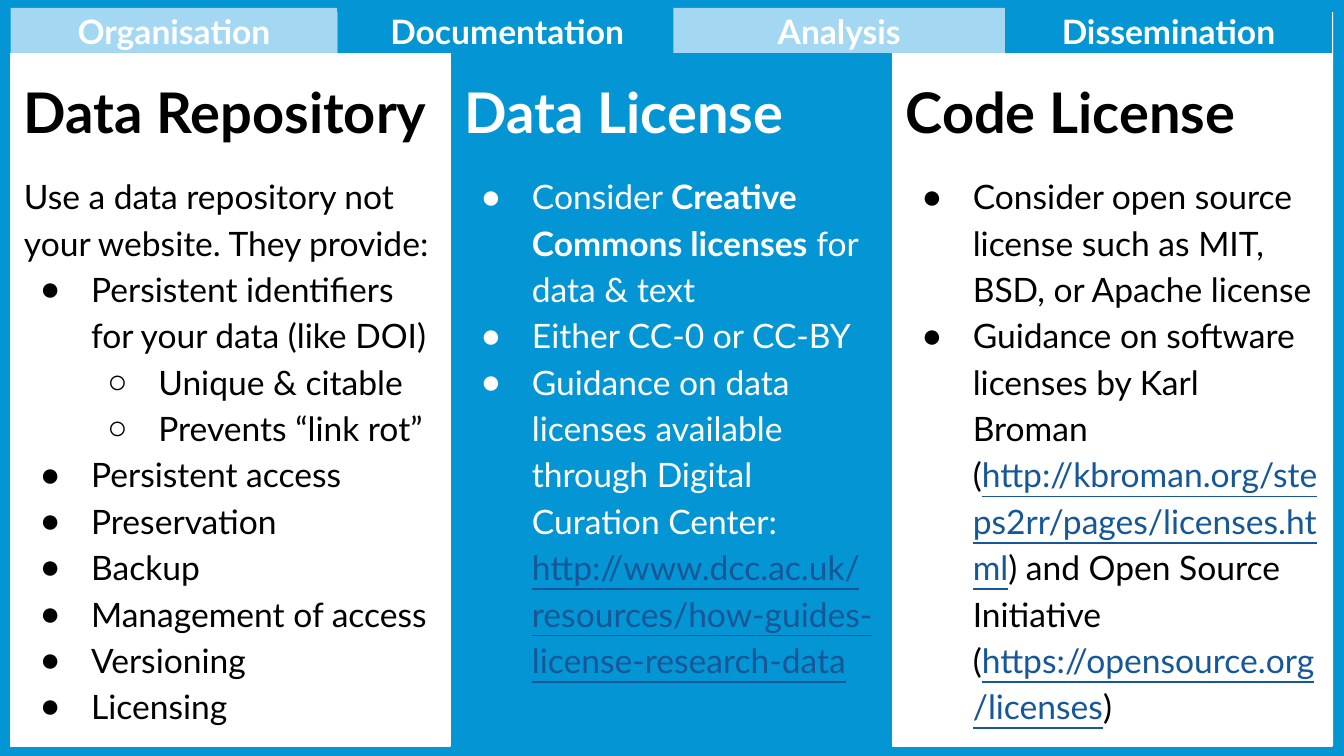
from lxml import etree
from pptx import Presentation
from pptx import util as u
from pptx.dml.color import RGBColor
from pptx.enum import shapes, text
from pptx.oxml.ns import qn

FONT, BULLET_FONT = "Lato", "Arial"
BLUE, PALE, WHITE, BLACK, LINK = "0496D4", "A4D7F2", "FFFFFF", "000000", "165797"

TABS = [
    ("Organisation", 0.08, 2.43, PALE),
    ("Documentation", 2.51, 2.53, BLUE),
    ("Analysis", 5.01, 2.47, PALE),
    ("Dissemination", 7.48, 2.43, BLUE),
]

# Paragraph kind: left margin, first-line indent, bullet
KINDS = {
    "plain": (0, 0, None),
    "item": (0.5, -0.38, "●"),
    "subitem": (1, -0.38, "○"),
    "continued": (0.5, 0, None),
}

# Each column: heading, fill, text colour, paragraphs as (kind, (text, style), ...)
COLUMNS = [
    ("Data Repository", WHITE, BLACK, [
        ("plain", ("Use a data repository not your website. They provide:", "")),
        ("item", ("Persistent identifiers for your data (like DOI)", "")),
        ("subitem", ("Unique & citable", "")),
        ("subitem", ("Prevents “link rot”", "")),
        ("item", ("Persistent access", "")),
        ("item", ("Preservation", "")),
        ("item", ("Backup", "")),
        ("item", ("Management of access", "")),
        ("item", ("Versioning", "")),
        ("item", ("Licensing", "")),
    ]),
    ("Data License", BLUE, WHITE, [
        ("item", ("Consider ", ""), ("Creative Commons licenses", "bold"),
         (" for data & text", "")),
        ("item", ("Either CC-0 or CC-BY", "")),
        ("item", ("Guidance on data licenses available through "
                  "Digital Curation Center:", "")),
        ("continued", ("http://www.dcc.ac.uk/resources/"
                       "how-guides-license-research-data", "link")),
    ]),
    ("Code License", WHITE, BLACK, [
        ("item", ("Consider open source license such as MIT, BSD, "
                  "or Apache license", "")),
        ("item", ("Guidance on software licenses by Karl Broman (", ""),
         ("http://kbroman.org/steps2rr/pages/licenses.html", "link"),
         (") and Open Source Initiative (", ""),
         ("https://opensource.org/licenses", "link"), (")", "")),
    ]),
]


def paint(target, colour):
    """Give a fill a solid colour."""
    target.solid()
    target.fore_color.rgb = RGBColor.from_string(colour)


def add_panel(page, left, top, width, height, colour, outlined=False):
    panel = page.shapes.add_shape(
        shapes.MSO_SHAPE.RECTANGLE,
        u.Inches(left), u.Inches(top), u.Inches(width), u.Inches(height))
    panel.shadow.inherit = False
    paint(panel.fill, colour)
    if outlined:
        paint(panel.line.fill, colour)
        panel.line.width = u.Pt(0.75)
    else:
        panel.line.fill.background()
    frame = panel.text_frame
    frame.word_wrap = True
    frame.margin_left = frame.margin_right = u.Inches(0.1)
    frame.margin_top = frame.margin_bottom = u.Inches(0.1)
    return panel


def set_font(para, size, colour, bold=False):
    para.font.name = FONT
    para.font.size = u.Pt(size)
    para.font.bold = bold
    paint(para.font.fill, colour)


def set_indent(para, kind, colour):
    margin, indent, bullet = KINDS[kind]
    para.level = 1 if kind == "subitem" else 0
    props = para._p.get_or_add_pPr()
    props.set("marL", str(u.Inches(margin)))
    props.set("indent", str(u.Inches(indent)))
    if bullet:
        tint = etree.SubElement(props, qn("a:buClr"))
        etree.SubElement(tint, qn("a:srgbClr"), val=colour)
        etree.SubElement(props, qn("a:buFont"), typeface=BULLET_FONT)
        etree.SubElement(props, qn("a:buChar"), char=bullet)


def add_spans(para, spans):
    for words, style in spans:
        span = para.add_run()
        span.text = words
        if style == "bold":
            span.font.bold = True
        elif style == "link":
            span.font.underline = True
            paint(span.font.fill, LINK)


def add_tab(page, label, left, width, colour):
    tab = add_panel(page, left, 0.06, width, 0.34, colour)
    tab.text_frame.vertical_anchor = text.MSO_ANCHOR.MIDDLE
    para = tab.text_frame.paragraphs[0]
    para.text = label
    para.alignment = text.PP_ALIGN.CENTER
    para.space_before = u.Pt(6)
    set_font(para, 18, WHITE, bold=True)


def add_column(page, left, heading, fill, colour, content):
    column = add_panel(page, left, 0.4, 3.27, 5.15, fill, outlined=True)
    frame = column.text_frame
    frame.vertical_anchor = text.MSO_ANCHOR.TOP
    title = frame.paragraphs[0]
    title.text = heading
    title.space_after = u.Pt(13.8)
    set_font(title, 30, colour, bold=True)
    for kind, *spans in content:
        para = frame.add_paragraph()
        set_indent(para, kind, colour)
        set_font(para, 18, colour)
        add_spans(para, spans)
    for para in frame.paragraphs:
        para.alignment = text.PP_ALIGN.LEFT
        para.line_spacing = 1.15


def main():
    deck = Presentation()
    deck.slide_width = u.Inches(10)
    deck.slide_height = deck.slide_width * 9 // 16
    page = deck.slides.add_slide(deck.slide_layouts[6])
    paint(page.background.fill, BLUE)
    add_panel(page, 0.09, 0.09, 9.83, 5.46, WHITE)
    for tab in TABS:
        add_tab(page, *tab)
    for index, column in enumerate(COLUMNS):
        add_column(page, 0.08 + 3.28 * index, *column)
    deck.save("out.pptx")


if __name__ == "__main__":
    main()
